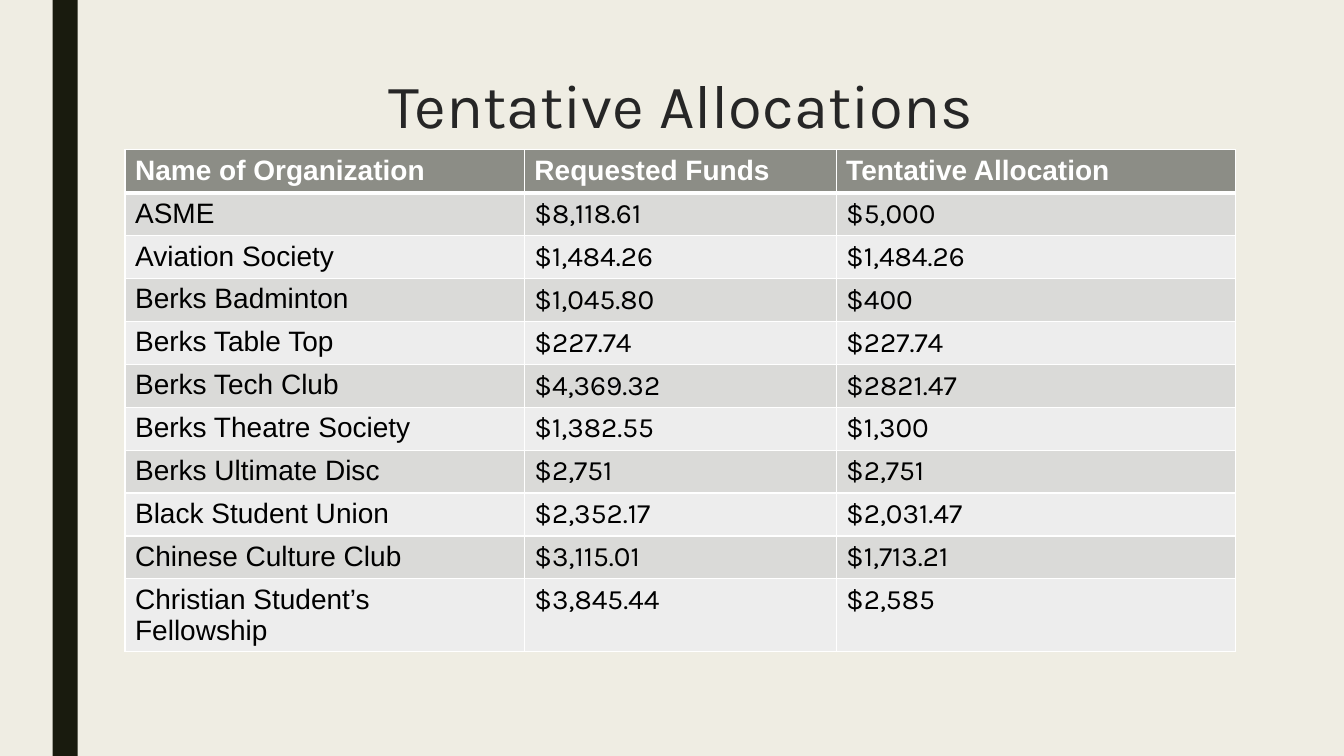
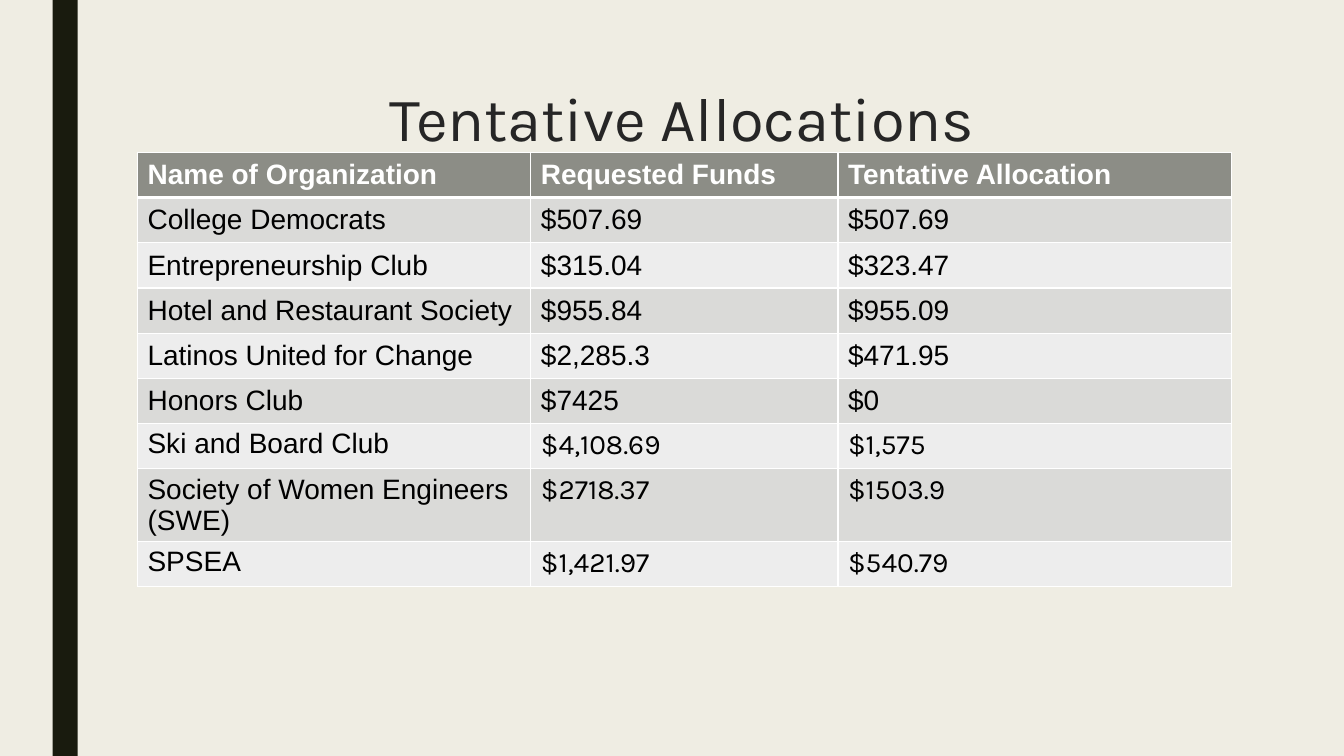
from lxml.etree import SubElement
from pptx import Presentation
from pptx.dml.color import RGBColor
from pptx.enum.shapes import MSO_SHAPE
from pptx.enum.text import MSO_ANCHOR, MSO_AUTO_SIZE, PP_ALIGN
from pptx.oxml.ns import qn
from pptx.util import Pt

HEADER = ("Name of Organization", "Requested Funds", "Tentative Allocation")

FIRST_CLUBS = [
    ("ASME", "$8,118.61", "$5,000"),
    ("Aviation Society", "$1,484.26", "$1,484.26"),
    ("Berks Badminton", "$1,045.80", "$400"),
    ("Berks Table Top", "$227.74", "$227.74"),
    ("Berks Tech Club", "$4,369.32", "$2821.47"),
    ("Berks Theatre Society", "$1,382.55", "$1,300"),
    ("Berks Ultimate Disc", "$2,751", "$2,751"),
    ("Black Student Union", "$2,352.17", "$2,031.47"),
    ("Chinese Culture Club", "$3,115.01", "$1,713.21"),
    ("Christian Student’s\vFellowship", "$3,845.44", "$2,585"),
]

SECOND_CLUBS = [
    ("College Democrats", "$507.69", "$507.69"),
    ("Entrepreneurship Club", "$315.04", "$323.47"),
    ("Hotel and Restaurant Society", "$955.84", "$955.09"),
    ("Latinos United for Change", "$2,285.3", "$471.95"),
    ("Honors Club", "$7425", "$0"),
    ("Ski and Board Club", "$4,108.69", "$1,575"),
    ("Society of Women Engineers (SWE)", "$2718.37", "$1503.9"),
    ("SPSEA", "$1,421.97", "$540.79"),
]


def rgb(color):
    return RGBColor.from_string(color)


def write(tf, text, size=20, font="Arial", color="000000", bold=False,
          align=PP_ALIGN.LEFT):
    p = tf.paragraphs[0]
    p.text = text
    p.alignment = align
    for r in p.runs:
        r.font.size = Pt(size)
        r.font.name = font
        r.font.bold = bold
        r.font.color.rgb = rgb(color)


def border(cell, side, width, color):
    """Draw one cell edge; side is L, R, T or B. Call before filling the cell."""
    ln = SubElement(cell._tc.get_or_add_tcPr(), qn(f"a:ln{side}"), w=str(Pt(width)))
    fill = SubElement(ln, qn("a:solidFill"))
    SubElement(fill, qn("a:srgbClr"), val=color)


class Deck:
    PAPER, BAND, TITLE, WHITE = "EFEDE3", "191B0E", "262626", "FFFFFF"
    HEAD_FILL, ROW_FILLS = "8C8D86", ("EDEDED", "DADAD8")
    ACCENT_FONT = "Karla"

    def __init__(self):
        self.prs = Presentation()
        self.prs.slide_width, self.prs.slide_height = Pt(960), Pt(540)
        fill = self.prs.slide_master.background.fill
        fill.solid()
        fill.fore_color.rgb = rgb(self.PAPER)
        self.slide = None

    def add_slide(self):
        self.slide = self.prs.slides.add_slide(self.prs.slide_layouts[5])
        self.add_band()

    def add_band(self):
        sp = self.slide.shapes.add_shape(
            MSO_SHAPE.RECTANGLE, Pt(37.5), Pt(0), Pt(18), self.prs.slide_height)
        sp.shadow.inherit = False
        sp.fill.solid()
        sp.fill.fore_color.rgb = rgb(self.BAND)
        sp.line.fill.background()

    def add_title(self, text, left, top):
        sp = self.slide.shapes.title
        sp.left, sp.top, sp.width, sp.height = Pt(left), Pt(top), Pt(756), Pt(62)
        tf = sp.text_frame
        tf.word_wrap = True
        tf.auto_size = MSO_AUTO_SIZE.NONE
        tf.vertical_anchor = MSO_ANCHOR.MIDDLE
        write(tf, text, size=44, font=self.ACCENT_FONT, color=self.TITLE,
              align=PP_ALIGN.CENTER)

    def add_table(self, rows, left, top, widths, row_height, plain_rows=0):
        """The first plain_rows rows are centred vertically and all in Arial."""
        frame = self.slide.shapes.add_table(
            len(rows), len(widths), Pt(left), Pt(top),
            Pt(sum(widths)), Pt(row_height * len(rows)))
        table = frame.table
        for column, width in zip(table.columns, widths):
            column.width = Pt(width)
        for i, row in enumerate(rows):
            table.rows[i].height = Pt(row_height)
            for j, text in enumerate(row):
                self.format_cell(table.cell(i, j), text, i, j, i < plain_rows)

    def format_cell(self, cell, text, i, j, plain):
        head = i == 0
        border(cell, "L", 1, self.WHITE)
        border(cell, "R", 1, self.WHITE)
        border(cell, "T", 3 if i == 1 else 1, self.WHITE)
        border(cell, "B", 3 if head else 1, self.WHITE)
        cell.fill.solid()
        cell.fill.fore_color.rgb = rgb(self.HEAD_FILL if head else self.ROW_FILLS[i % 2])
        cell.vertical_anchor = MSO_ANCHOR.MIDDLE if plain else MSO_ANCHOR.TOP
        arial = head or plain or j == 0
        write(cell.text_frame, text, font="Arial" if arial else self.ACCENT_FONT,
              color=self.WHITE if head else "000000", bold=head)


def main():
    deck = Deck()

    deck.add_slide()
    deck.add_title("Tentative Allocations", 108.5, 43)
    deck.add_table([HEADER] + FIRST_CLUBS, 89.3, 107, (285.3, 222.7, 285.3), 30.65)

    deck.add_slide()
    deck.add_title("Tentative Allocations", 109.5, 52.5)
    deck.add_table([HEADER] + SECOND_CLUBS, 98.2, 108.8, (281, 219.4, 281), 32.3,
                   plain_rows=6)

    deck.prs.save("out.pptx")


if __name__ == "__main__":
    main()
